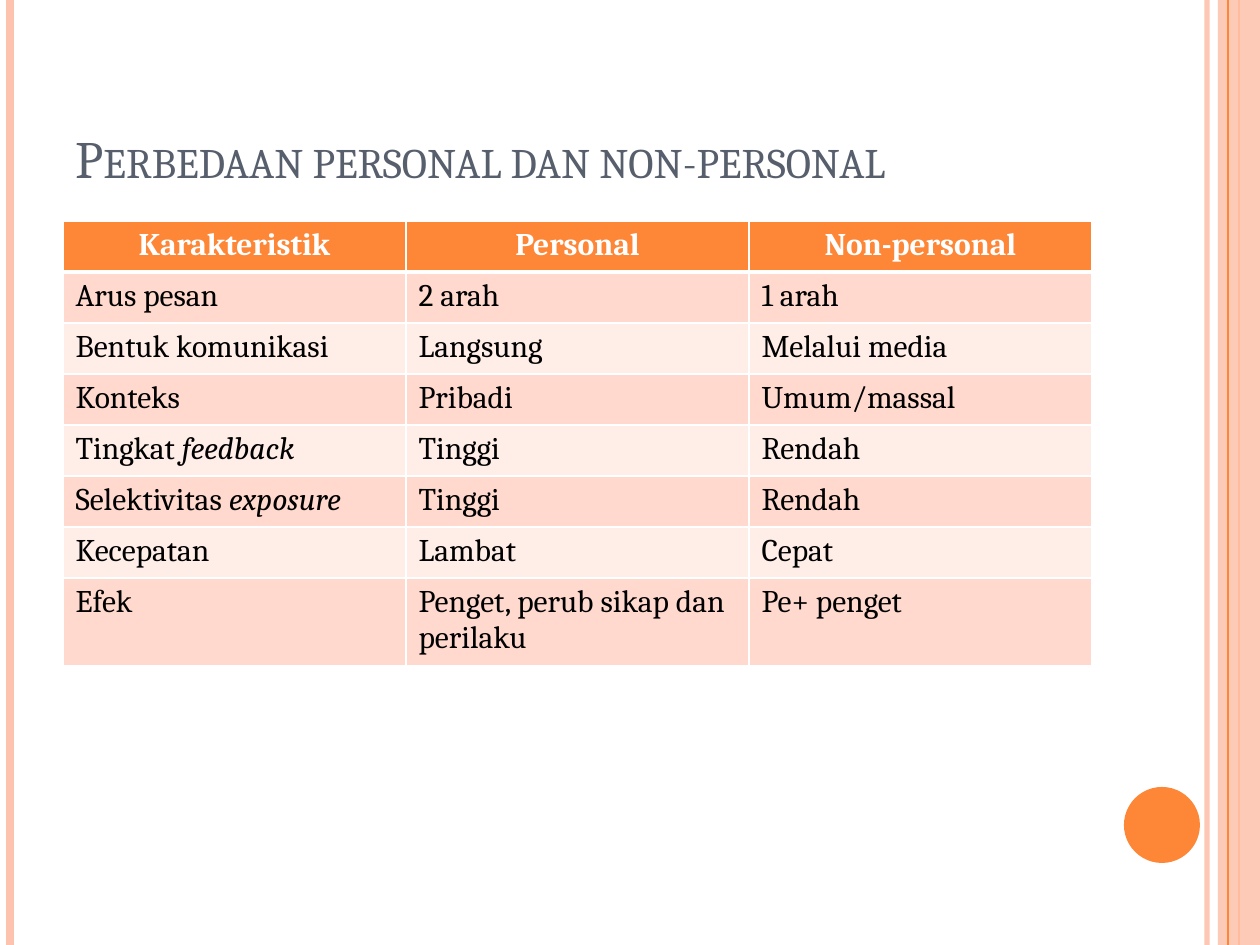
"""Build a slide comparing personal and non-personal communication."""
from dataclasses import dataclass

from lxml import etree
from pptx import Presentation
from pptx import util as u
from pptx.dml.color import RGBColor
from pptx.enum import shapes, text
from pptx.oxml.ns import qn


@dataclass(frozen=True)
class Theme:
    font: str = "Cambria"
    title_size: int = 30
    table_size: int = 18
    title: str = "575F6D"
    accent: str = "FE8637"
    stripe: str = "FEC3AE"
    white: str = "FFFFFF"
    body: str = "000000"
    bands: tuple = ("FFD9CE", "FFEDE8")


def px(length):
    return u.Emu(round(length * 914400 / 126))


def set_alpha(fill_parent, percent):
    color = next(fill_parent.iter(qn("a:srgbClr")))
    etree.SubElement(color, qn("a:alpha"), val=str(percent * 1000))


class SlideBuilder:
    def __init__(self, slide, theme):
        self.slide = slide
        self.theme = theme

    def add_run(self, paragraph, words, size, color, bold=False, italic=False):
        run = paragraph.add_run()
        run.text = words
        run.font.name = self.theme.font
        run.font.size = u.Pt(size)
        run.font.bold = bold
        run.font.italic = italic
        run.font.color.rgb = RGBColor.from_string(color)
        return run

    def vertical_line(self, x, color, width, opacity=100):
        line = self.slide.shapes.add_connector(
            shapes.MSO_CONNECTOR.STRAIGHT, px(x), px(0), px(x), px(945))
        line.line.color.rgb = RGBColor.from_string(color)
        line.line.width = u.Pt(width)
        properties = line._element.spPr
        if opacity < 100:
            set_alpha(properties, opacity)
        etree.SubElement(properties, qn("a:effectLst"))

    def filled_shape(self, kind, left, top, width, height, color, opacity=100):
        shape = self.slide.shapes.add_shape(
            kind, px(left), px(top), px(width), px(height))
        shape.shadow.inherit = False
        shape.fill.solid()
        shape.fill.fore_color.rgb = RGBColor.from_string(color)
        shape.line.fill.background()
        if opacity < 100:
            set_alpha(shape._element.spPr, opacity)

    def title(self, words, left, top, width, height):
        frame = self.slide.shapes.add_textbox(
            px(left), px(top), px(width), px(height)).text_frame
        frame.word_wrap = True
        frame.vertical_anchor = text.MSO_ANCHOR.BOTTOM
        run = self.add_run(frame.paragraphs[0], words,
                           self.theme.title_size, self.theme.title)
        run.font._element.set("cap", "small")

    def cell_borders(self, cell, top=1, bottom=1):
        properties = cell._tc.get_or_add_tcPr()
        for side, width in (("L", 1), ("R", 1), ("T", top), ("B", bottom)):
            border = etree.SubElement(
                properties, qn(f"a:ln{side}"), w=str(u.Pt(width)))
            fill = etree.SubElement(border, qn("a:solidFill"))
            etree.SubElement(fill, qn("a:srgbClr"), val=self.theme.white)

    def table(self, rows, left, top, column_width, row_heights):
        columns = len(rows[0])
        table = self.slide.shapes.add_table(
            len(rows), columns, px(left), px(top),
            px(column_width * columns), px(sum(row_heights))).table
        for column in table.columns:
            column.width = px(column_width)
        for index, (values, height) in enumerate(zip(rows, row_heights)):
            table.rows[index].height = px(height)
            for column, value in enumerate(values):
                self.table_cell(table.cell(index, column), index, value)

    def table_cell(self, cell, row, value):
        header = row == 0
        self.cell_borders(cell, top=3 if row == 1 else 1,
                          bottom=3 if header else 1)
        cell.fill.solid()
        cell.fill.fore_color.rgb = RGBColor.from_string(
            self.theme.accent if header else self.theme.bands[(row - 1) % 2])
        paragraph = cell.text_frame.paragraphs[0]
        if header:
            paragraph.alignment = text.PP_ALIGN.CENTER
        color = self.theme.white if header else self.theme.body
        for part, words in enumerate(value.split("*")):
            if words:
                self.add_run(paragraph, words, self.theme.table_size, color,
                             bold=header, italic=part % 2 == 1)


ROWS = (
    ("Karakteristik", "Personal", "Non-personal"),
    ("Arus pesan", "2 arah", "1 arah"),
    ("Bentuk komunikasi", "Langsung", "Melalui media"),
    ("Konteks", "Pribadi", "Umum/massal"),
    ("Tingkat *feedback*", "Tinggi", "Rendah"),
    ("Selektivitas *exposure*", "Tinggi", "Rendah"),
    ("Kecepatan", "Lambat", "Cepat"),
    ("Efek", "Penget, perub sikap dan perilaku", "Pe+ penget"),
)


def main():
    presentation = Presentation()
    presentation.slide_width = px(1260)
    presentation.slide_height = px(945)
    theme = Theme()
    builder = SlideBuilder(
        presentation.slides.add_slide(presentation.slide_layouts[6]), theme)

    builder.vertical_line(1207, theme.stripe, 3, opacity=93)
    builder.vertical_line(10, theme.stripe, 4.5)
    builder.vertical_line(1239, theme.accent, 1.5)
    builder.filled_shape(shapes.MSO_SHAPE.RECTANGLE,
                         1218, 0, 42, 945, theme.stripe, opacity=87)
    builder.vertical_line(1228, theme.accent, 0.75)
    builder.filled_shape(shapes.MSO_SHAPE.OVAL,
                         1124, 787, 76, 76, theme.accent)
    builder.title("Perbedaan personal dan non-personal", 63, 38, 1119, 157)
    builder.table(ROWS, 63, 221, 343, [51] * 7 + [85])
    presentation.save("out.pptx")


if __name__ == "__main__":
    main()
